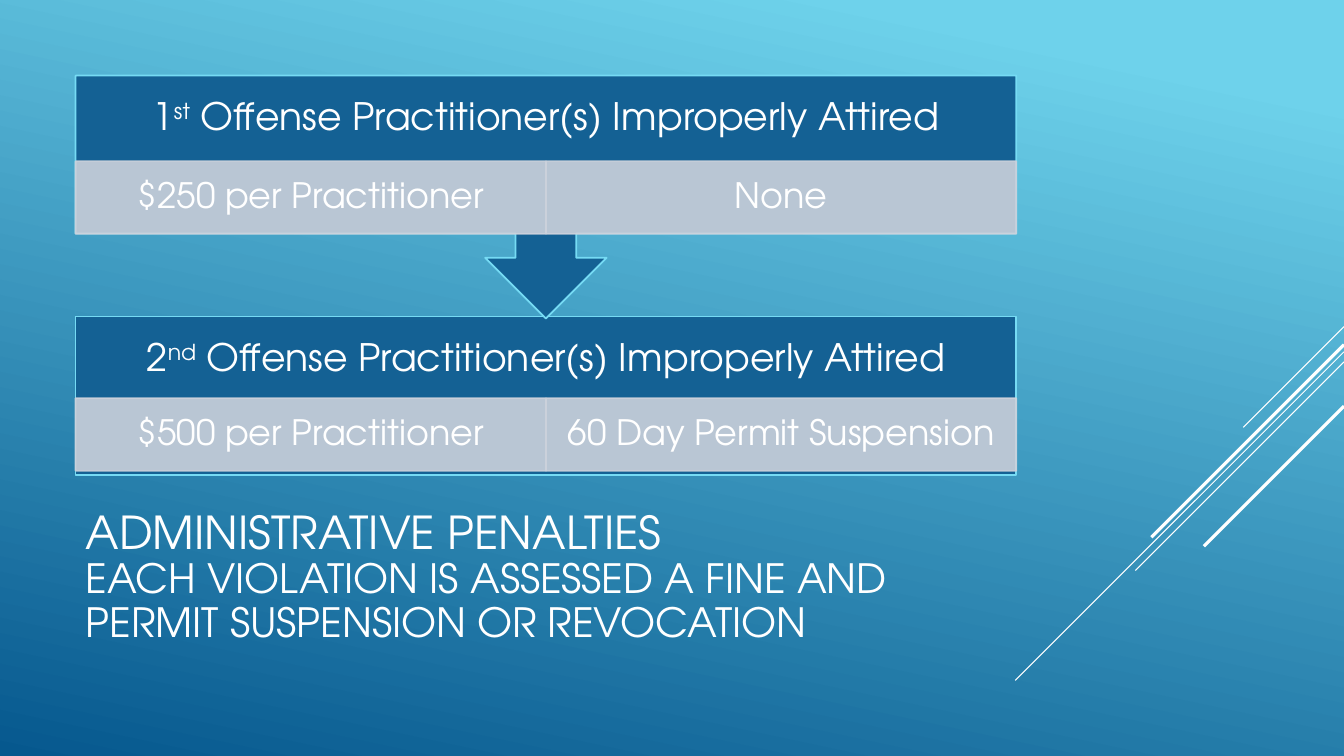
"""Build the administrative penalties slide."""
from dataclasses import dataclass

from lxml.etree import SubElement
from pptx import Presentation
from pptx.dml.color import RGBColor
from pptx.enum.shapes import MSO_CONNECTOR, MSO_SHAPE
from pptx.enum.text import MSO_ANCHOR, MSO_AUTO_SIZE, PP_ALIGN
from pptx.oxml.ns import qn
from pptx.util import Inches, Pt

TITLE = (
    "ADMINISTRATIVE PENALTIES",
    "EACH VIOLATION IS ASSESSED A FINE AND PERMIT SUSPENSION OR REVOCATION",
)
OFFENSE = " Offense Practitioner(s) Improperly Attired"
STEPS = [
    {"number": "1", "suffix": "st", "penalties": ("$250 per Practitioner", "None")},
    {"number": "2", "suffix": "nd", "penalties": ("$500 per Practitioner", "60 Day Permit Suspension")},
]
STEP_FRAMES = [
    {"shape": MSO_SHAPE.DOWN_ARROW_CALLOUT, "top": 0.75, "height": 2.41, "row_top": 1.6},
    {"shape": MSO_SHAPE.RECTANGLE, "top": 3.14, "height": 1.57, "row_top": 3.95},
]
DIAGONALS = [
    {"top": 3.24, "reach": 1.0, "weight": 0.75},
    {"top": 3.49, "reach": 3.26, "weight": 0.75},
    {"top": 3.59, "reach": 2.07, "weight": 0.75},
    {"top": 3.42, "reach": 1.91, "weight": 2.25},
    {"top": 4.03, "reach": 1.39, "weight": 2.25},
]
SLIDE_WIDTH, SLIDE_HEIGHT = 13.33, 7.5
LEFT, WIDTH = 0.75, 9.33
HEADER_HEIGHT, ROW_HEIGHT = 0.85, 0.72
TITLE_TOP, TITLE_HEIGHT = 4.91, 1.65


@dataclass(frozen=True)
class Theme:
    font: str = "TeX Gyre Adventor"
    text: str = "FFFFFF"
    sky: str = "6ED2EB"
    sea: str = "06588E"
    header: str = "146194"
    outline: str = "76DBF4"
    penalty: str = "CCD2DC"
    penalty_opacity: int = 90
    border: float = 1.25
    title_sizes: tuple = (32.4, 28.8)
    header_size: float = 27
    penalty_size: float = 25


THEME = Theme()


def color(value):
    return RGBColor.from_string(value)


def style_run(run, size):
    run.font.name = THEME.font
    run.font.size = Pt(size)
    run.font.color.rgb = color(THEME.text)


def paint_background(slide):
    fill = slide.background.fill
    fill.gradient()
    fill.gradient_angle = 360 - 102
    stops = ((0.1, THEME.sky), (1, THEME.sea))
    for stop, (position, value) in zip(fill.gradient_stops, stops):
        stop.position = position
        stop.color.rgb = color(value)


def add_diagonal(slide, top, reach, weight):
    ends = (SLIDE_WIDTH, top, SLIDE_WIDTH - reach, top + reach)
    line = slide.shapes.add_connector(MSO_CONNECTOR.STRAIGHT, *map(Inches, ends))
    line.line.color.rgb = color(THEME.text)
    line.line.width = Pt(weight)
    SubElement(line._element.spPr, qn("a:effectLst"))


def add_panel(slide, kind, box, fill, outline, opacity=100):
    shape = slide.shapes.add_shape(kind, *map(Inches, box))
    shape.shadow.inherit = False
    shape.fill.solid()
    shape.fill.fore_color.rgb = color(fill)
    shape.line.color.rgb = color(outline)
    shape.line.width = Pt(THEME.border)
    if opacity < 100:
        for node in shape._element.spPr.iter(qn("a:srgbClr")):
            SubElement(node, qn("a:alpha")).set("val", str(opacity * 1000))
    return shape


def write_centered(shape, pieces, size, insets):
    frame = shape.text_frame
    frame.word_wrap = True
    frame.vertical_anchor = MSO_ANCHOR.MIDDLE
    frame.margin_left = frame.margin_right = Inches(insets[0])
    frame.margin_top = frame.margin_bottom = Inches(insets[1])
    paragraph = frame.paragraphs[0]
    paragraph.alignment = PP_ALIGN.CENTER
    paragraph.line_spacing = 0.9
    for piece in pieces:
        run = paragraph.add_run()
        run.text = piece
        style_run(run, size)
    return paragraph


def add_step(slide, step, frame):
    box = (LEFT, frame["top"], WIDTH, frame["height"])
    add_panel(slide, frame["shape"], box, THEME.header, THEME.outline)
    header_box = (LEFT, frame["top"], WIDTH, HEADER_HEIGHT)
    header = slide.shapes.add_textbox(*map(Inches, header_box))
    pieces = (step["number"], step["suffix"], OFFENSE)
    paragraph = write_centered(header, pieces, THEME.header_size, (0.21, 0.21))
    paragraph.runs[1].font._element.set("baseline", "30000")

    column_width = WIDTH / len(step["penalties"])
    for column, penalty in enumerate(step["penalties"]):
        cell_box = (LEFT + column * column_width, frame["row_top"], column_width, ROW_HEIGHT)
        cell = add_panel(slide, MSO_SHAPE.RECTANGLE, cell_box, THEME.penalty,
                         THEME.penalty, THEME.penalty_opacity)
        write_centered(cell, (penalty,), THEME.penalty_size, (0.19, 0.03))


def fill_title(title):
    title.left, title.top = Inches(LEFT), Inches(TITLE_TOP)
    title.width, title.height = Inches(WIDTH), Inches(TITLE_HEIGHT)
    frame = title.text_frame
    frame.text = "\v".join(TITLE)
    frame.word_wrap = True
    frame.auto_size = MSO_AUTO_SIZE.NONE
    frame.vertical_anchor = MSO_ANCHOR.MIDDLE
    paragraph = frame.paragraphs[0]
    paragraph.alignment = PP_ALIGN.LEFT
    paragraph.line_spacing = 0.9
    for run, size in zip(paragraph.runs, THEME.title_sizes):
        style_run(run, size)


def main():
    presentation = Presentation()
    presentation.slide_width = Inches(SLIDE_WIDTH)
    presentation.slide_height = Inches(SLIDE_HEIGHT)
    slide = presentation.slides.add_slide(presentation.slide_layouts[5])
    paint_background(slide)
    for diagonal in DIAGONALS:
        add_diagonal(slide, **diagonal)
    fill_title(slide.shapes.title)
    for step, frame in reversed(list(zip(STEPS, STEP_FRAMES))):
        add_step(slide, step, frame)
    presentation.save("out.pptx")


if __name__ == "__main__":
    main()
